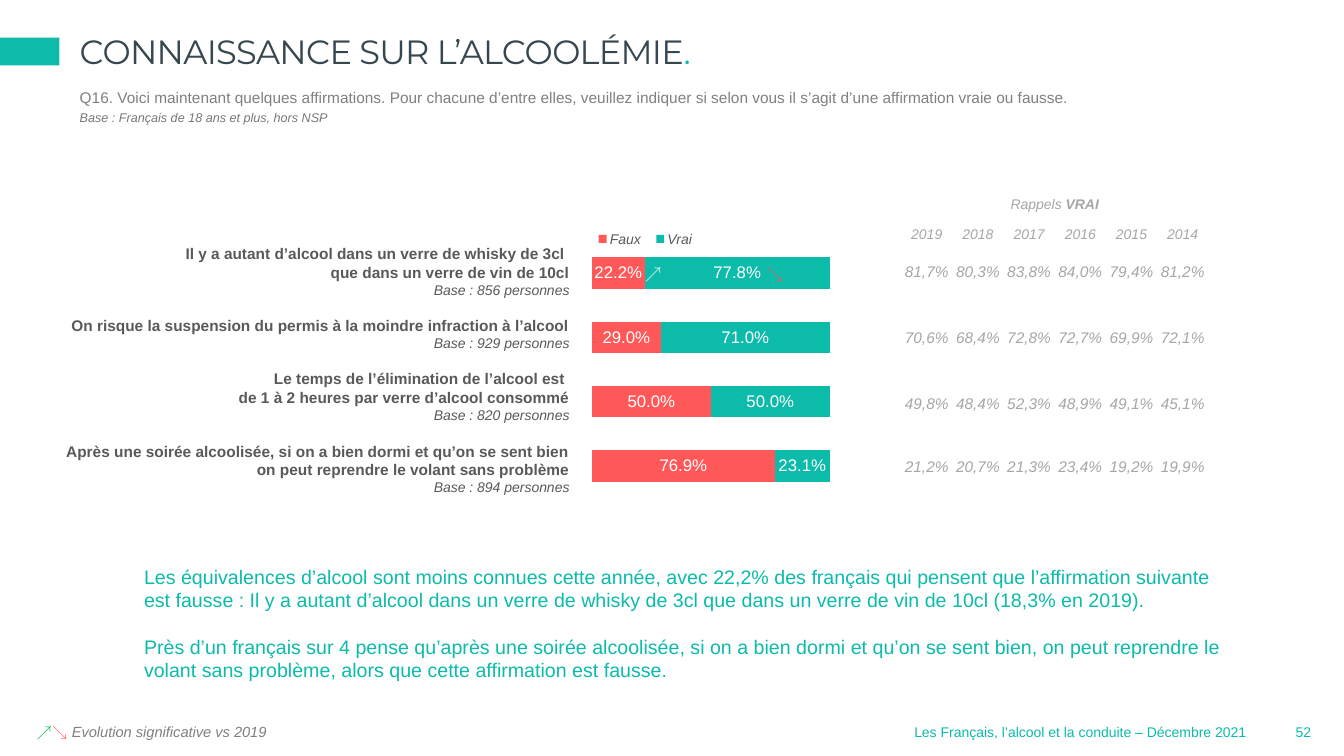
from lxml.etree import SubElement
from pptx import Presentation
from pptx.chart.data import CategoryChartData
from pptx.dml.color import RGBColor
from pptx.enum.chart import XL_CHART_TYPE, XL_LABEL_POSITION
from pptx.enum.shapes import MSO_SHAPE
from pptx.enum.text import MSO_ANCHOR, PP_ALIGN
from pptx.oxml.ns import qn
from pptx.util import Cm, Pt

TEAL, RED, GREEN, WHITE = "0CBBAA", "FF5859", "00B050", "FFFFFF"
SLATE, GREY, PALE, DARK = "37474F", "808080", "A6A6A6", "595959"

TITLE = "CONNAISSANCE SUR L’ALCOOLÉMIE"
QUESTION = ("Q16. Voici maintenant quelques affirmations. Pour chacune d’entre elles, "
            "veuillez indiquer si selon vous il s’agit d’une affirmation vraie ou fausse.")
QUESTION_BASE = "Base : Français de 18 ans et plus, hors NSP"
STATEMENTS = [
    (6.15, 1.37, ["Il y a autant d’alcool dans un verre de whisky de 3cl ",
                  "que dans un verre de vin de 10cl"], "Base : 856 personnes"),
    (7.95, 0.94, ["On risque la suspension du permis à la moindre infraction à l’alcool"],
     "Base : 929 personnes"),
    (9.3, 1.37, ["Le temps de l’élimination de l’alcool est ",
                 "de 1 à 2 heures par verre d’alcool consommé"], "Base : 820 personnes"),
    (11.13, 1.37, ["Après une soirée alcoolisée, si on a bien dormi et qu’on se sent "
                   "bien on peut reprendre le volant sans problème"], "Base : 894 personnes"),
]
ANSWERS = [
    ("Faux", RED, [22.2, 29, 50, 76.9], 15.09),
    ("Vrai", TEAL, [77.8, 71, 50, 23.1], 16.54),
]
EMPTY_BANDS = [None] * 4
YEARS = ["2019", "2018", "2017", "2016", "2015", "2014"]
REMINDERS = [
    ["81,7%", "80,3%", "83,8%", "84,0%", "79,4%", "81,2%"],
    ["70,6%", "68,4%", "72,8%", "72,7%", "69,9%", "72,1%"],
    ["49,8%", "48,4%", "52,3%", "48,9%", "49,1%", "45,1%"],
    ["21,2%", "20,7%", "21,3%", "23,4%", "19,2%", "19,9%"],
]
ROW_HEIGHTS = [1.07, 0.43, 1.4, 1.93, 1.4, 1.8]
COMMENTS = [
    "Les équivalences d’alcool sont moins connues cette année, avec 22,2% des français qui "
    "pensent que l’affirmation suivante est fausse : Il y a autant d’alcool dans un verre de "
    "whisky de 3cl que dans un verre de vin de 10cl (18,3% en 2019).",
    "Près d’un français sur 4 pense qu’après une soirée alcoolisée, si on a bien dormi et "
    "qu’on se sent bien, on peut reprendre le volant sans problème, alors que cette "
    "affirmation est fausse.",
]
CHANGE_ARROWS = [("↗", WHITE, 16.0), ("↘", RED, 19.08)]
FOOTER = "Les Français, l’alcool et la conduite – Décembre 2021"
PAGE = "52"


def color(value):
    return RGBColor.from_string(value)


def style(font, size, tint, **formats):
    values = {"name": "Arial", "size": Pt(size), "bold": False, "italic": False} | formats
    for name, value in values.items():
        setattr(font, name, value)
    font.color.rgb = color(tint)


def write(frame, paragraphs, align=PP_ALIGN.LEFT, before=0, after=0):
    for index, runs in enumerate(paragraphs):
        paragraph = frame.paragraphs[0] if index == 0 else frame.add_paragraph()
        paragraph.alignment = align
        if index and before:
            paragraph.space_before = Pt(before)
        if after:
            paragraph.space_after = Pt(after)
        for text, size, tint, formats in runs:
            run = paragraph.add_run()
            run.text = text
            style(run.font, size, tint, **formats)


def add_text(slide, box, paragraphs, insets=(0.25, 0.13), wrap=True,
             anchor=MSO_ANCHOR.TOP, **layout):
    frame = slide.shapes.add_textbox(*map(Cm, box)).text_frame
    side, edge = map(Cm, insets)
    values = {"margin_left": side, "margin_right": side, "margin_top": edge,
              "margin_bottom": edge, "word_wrap": wrap, "vertical_anchor": anchor}
    for name, value in values.items():
        setattr(frame, name, value)
    write(frame, paragraphs, **layout)
    return frame


def add_square(slide, box, tint):
    shape = slide.shapes.add_shape(MSO_SHAPE.RECTANGLE, *map(Cm, box))
    shape.shadow.inherit = False
    shape.fill.solid()
    shape.fill.fore_color.rgb = color(tint)
    shape.line.fill.background()


def add_answer_chart(slide):
    data = CategoryChartData()
    data.categories = ["1", "2", "3", "4", "", "", "", ""]
    for name, _, values, _ in ANSWERS:
        data.add_series(name, values + EMPTY_BANDS)
    chart = slide.shapes.add_chart(XL_CHART_TYPE.BAR_STACKED, Cm(8.92), Cm(6.07),
                                   Cm(14.99), Cm(12.98), data).chart
    chart.has_legend = chart.has_title = False
    style(chart.font, 10.6, "000000", bold=True)
    chart.category_axis.reverse_order = True
    chart.category_axis.visible = chart.value_axis.visible = False
    chart.value_axis.has_major_gridlines = False
    chart.value_axis.minimum_scale, chart.value_axis.maximum_scale = -100, 150
    plot = chart.plots[0]
    plot.gap_width, plot.overlap, plot.vary_by_categories = 105, 100, False
    for series, (_, tint, _, _) in zip(plot.series, ANSWERS):
        series.format.fill.solid()
        series.format.fill.fore_color.rgb = color(tint)
        labels = series.data_labels
        formats = {"show_value": True, "position": XL_LABEL_POSITION.CENTER,
                   "number_format": '0.0"%"', "number_format_is_linked": False}
        for name, value in formats.items():
            setattr(labels, name, value)
        style(labels.font, 12, WHITE)
    area = chart._chartSpace.chart.plotArea
    for layout in area.findall(qn("c:layout")):
        area.remove(layout)
    layout = SubElement(area, qn("c:layout"))
    area.insert(0, layout)
    manual = SubElement(layout, qn("c:manualLayout"))
    for tag, value in [("layoutTarget", "inner"), ("xMode", "edge"), ("yMode", "edge"),
                       ("x", "0"), ("y", "0"), ("w", "1"), ("h", "1")]:
        SubElement(manual, qn("c:" + tag)).set("val", value)


def add_reminder_table(slide):
    table = slide.shapes.add_table(len(ROW_HEIGHTS), len(YEARS), Cm(22.71), Cm(4.62),
                                   Cm(7.74), Cm(sum(ROW_HEIGHTS))).table
    table.first_row = table.horz_banding = False
    for column in table.columns:
        column.width = Cm(1.29)
    for row, height in zip(table.rows, ROW_HEIGHTS):
        row.height = Cm(height)
    italic = {"italic": True}
    heading = [("Rappels ", 10, PALE, italic), ("VRAI", 10, PALE, italic | {"bold": True})]
    rows = [[heading] + [[("", 10, PALE, italic)]] * 5]
    rows += [[[(year, 10, PALE, italic)] for year in YEARS]]
    rows += [[[(value, 11, PALE, italic)] for value in values] for values in REMINDERS]
    table.cell(0, 0).merge(table.cell(0, len(YEARS) - 1))
    for row_index, row in enumerate(rows):
        for column_index, runs in enumerate(row):
            cell = table.cell(row_index, column_index)
            cell.fill.background()
            formats = {"margin_left": Cm(0.02), "margin_right": Cm(0.02), "margin_top": Cm(0.02),
                       "margin_bottom": 0, "vertical_anchor": MSO_ANCHOR.MIDDLE}
            for name, value in formats.items():
                setattr(cell, name, value)
            if not cell.is_spanned:
                write(cell.text_frame, [runs], PP_ALIGN.CENTER)


def main():
    presentation = Presentation()
    presentation.slide_width, presentation.slide_height = Cm(33.87), Cm(19.05)
    slide = presentation.slides.add_slide(presentation.slide_layouts[6])

    add_text(slide, (32.28, 18.11, 1.14, 0.69), [[(PAGE, 10, TEAL, {})]],
             wrap=False, align=PP_ALIGN.CENTER)
    add_text(slide, (22.71, 18.11, 8.94, 0.69), [[(FOOTER, 10, TEAL, {})]],
             wrap=False, align=PP_ALIGN.RIGHT)
    add_square(slide, (0, 0.95, 1.5, 0.7), TEAL)
    montserrat = {"name": "Montserrat"}
    title = add_text(slide, (2.01, 0.79, 30, 1.19),
                     [[(TITLE, 24, SLATE, montserrat), (".", 24, TEAL, montserrat)]], (0, 0))
    for run in title.paragraphs[0].runs:
        run._r.get_or_add_rPr().set("spc", "-50")
    add_text(slide, (2.01, 2.21, 30, 0.51),
             [[(QUESTION, 11, GREY, {})], [(QUESTION_BASE, 9, "77787B", {"italic": True})]],
             (0, 0), after=3)

    add_answer_chart(slide)
    add_reminder_table(slide)

    for top, height, lines, base in STATEMENTS:
        paragraphs = [[(line, 11, DARK, {"bold": True})] for line in lines]
        paragraphs.append([(base, 10, DARK, {"italic": True})])
        add_text(slide, (1.65, top, 12.7, height), paragraphs, (0, 0),
                 anchor=MSO_ANCHOR.MIDDLE, align=PP_ALIGN.RIGHT)
    for name, tint, _, left in ANSWERS:
        add_square(slide, (left, 5.92, 0.2, 0.2), tint)
        add_text(slide, (left + 0.28, 5.77, 1, 0.5),
                 [[(name, 10, "595A5C", {"italic": True})]], (0, 0),
                 wrap=False, anchor=MSO_ANCHOR.MIDDLE)
    for arrow, tint, left in CHANGE_ARROWS:
        add_text(slide, (left, 6.48, 1.04, 0.76), [[(arrow, 12, tint, {})]])

    add_text(slide, (0.28, 18.06, 7.09, 0.74),
             [[("↗", 11, GREEN, {}), ("↘ ", 11, RED, {}),
               ("Evolution significative vs 2019", 10.5, GREY, {"italic": True})]],
             align=PP_ALIGN.CENTER)
    add_text(slide, (3.38, 14.1, 27.97, 3.84),
             [[(comment, 14, TEAL, {})] for comment in COMMENTS], before=16.5)
    presentation.save("out.pptx")


if __name__ == "__main__":
    main()
